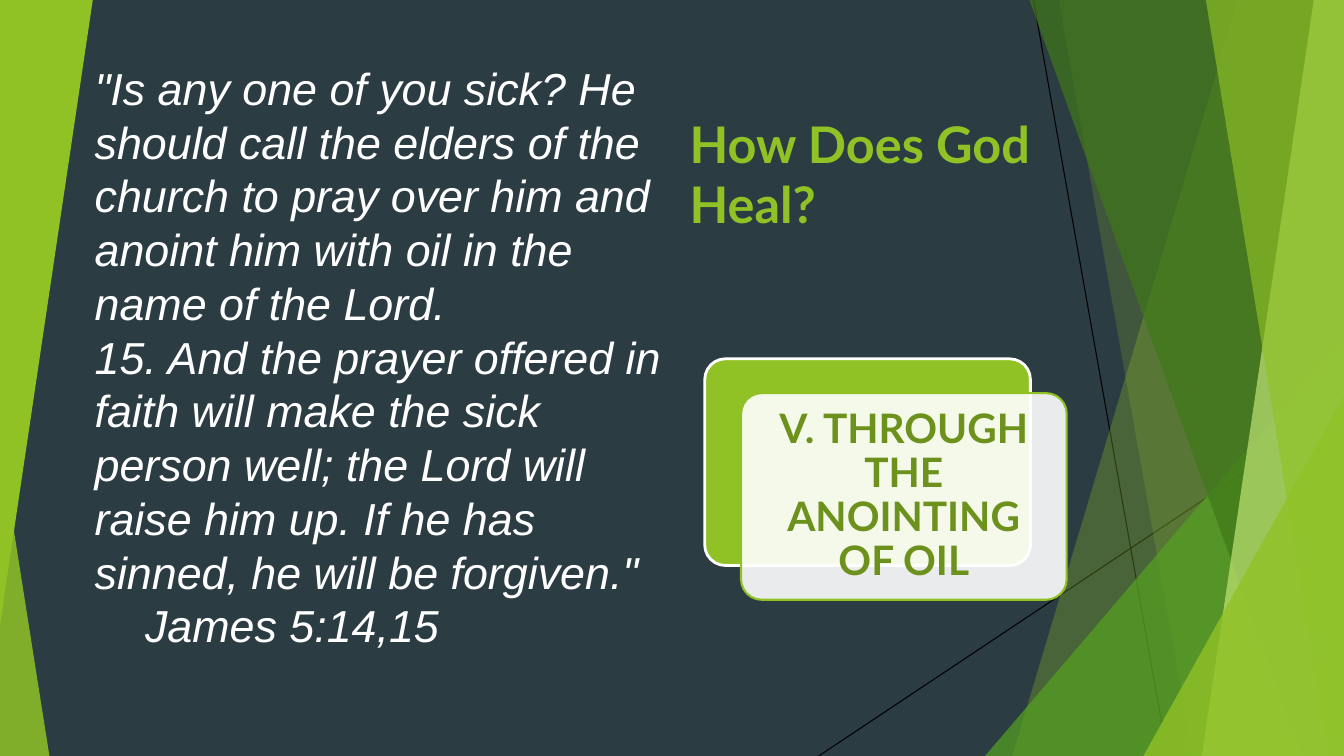
from dataclasses import dataclass

from lxml.etree import SubElement
from pptx import Presentation
from pptx.dml.color import RGBColor
from pptx.enum.shapes import MSO_CONNECTOR, MSO_SHAPE
from pptx.enum.text import MSO_ANCHOR, MSO_AUTO_SIZE, PP_ALIGN
from pptx.oxml.ns import qn
from pptx.util import Inches, Pt

WIDTH, HEIGHT = 13.33, 7.5
SLATE = RGBColor(0x2C, 0x3C, 0x43)
LIME = RGBColor(0x90, 0xC2, 0x26)
PALE_LIME = RGBColor(0xC0, 0xE4, 0x74)
GREEN = RGBColor(0x54, 0xA0, 0x21)
FOREST = RGBColor(0x3F, 0x78, 0x19)
OLIVE = RGBColor(0x6C, 0x92, 0x1D)
WHITE = RGBColor(0xFF, 0xFF, 0xFF)
BLACK = RGBColor(0, 0, 0)


@dataclass
class Facet:
    """Full-height band from a slanted left edge to the slide's right edge."""
    top_x: float
    bottom_x: float
    color: RGBColor
    opacity: int


@dataclass
class Triangle:
    left: float
    top: float
    width: float
    height: float
    apex: float
    color: RGBColor
    opacity: int = 100
    rotation: int = 0


@dataclass
class Card:
    left: float
    top: float
    fill: RGBColor
    opacity: int
    outline: RGBColor
    outline_width: float


LINES = [(10.25, 0, 11.58, HEIGHT), (WIDTH, 4.03, 8.12, HEIGHT)]
DECORATIONS = [
    Facet(12.28, 10.04, LIME, 30),
    Facet(10.5, 11.83, LIME, 20),
    Triangle(9.77, 3.33, 3.56, 4.17, 1, GREEN, 72),
    Facet(10.21, 12.91, FOREST, 70),
    Facet(13.03, 11.92, PALE_LIME, 70),
    Facet(11.96, 13.18, LIME, 65),
    Triangle(11.34, 3.93, 1.99, 3.57, 1, LIME, 80),
    Triangle(0, 4.39, 0.49, 3.11, 0, LIME, 85),
    Triangle(0, 0, 0.92, 6.2, 1, LIME, rotation=180),
]
CARDS = [
    Card(6.99, 3.56, LIME, 100, WHITE, 2),
    Card(7.35, 3.9, WHITE, 90, LIME, 1.5),
]
VERSES = [
    '"Is any one of you sick? He should call the elders of the church to pray '
    'over him and anoint him with oil in the name of the Lord.',
    '15. And the prayer offered in faith will make the sick person well; the '
    'Lord will raise him up. If he has sinned, he will be forgiven."',
    'James 5:14,15',
]


def paint(shape, color: RGBColor, opacity: int) -> None:
    shape.shadow.inherit = False
    shape.fill.solid()
    shape.fill.fore_color.rgb = color
    if opacity < 100:
        tint = shape.element.spPr.find(qn("a:solidFill")).find(qn("a:srgbClr"))
        SubElement(tint, qn("a:alpha"), val=str(opacity * 1000))


def draw_line(slide, ends: tuple) -> None:
    line = slide.shapes.add_connector(
        MSO_CONNECTOR.STRAIGHT, *(Inches(value) for value in ends))
    line.line.color.rgb = BLACK
    line.line.width = Pt(0.75)
    SubElement(line.element.spPr, qn("a:effectLst"))


def draw_facet(slide, facet: Facet) -> None:
    builder = slide.shapes.build_freeform(Inches(facet.top_x), 0)
    corners = [(WIDTH, 0), (WIDTH, HEIGHT), (facet.bottom_x, HEIGHT)]
    builder.add_line_segments([(Inches(x), Inches(y)) for x, y in corners])
    shape = builder.convert_to_shape()
    paint(shape, facet.color, facet.opacity)
    shape.line.fill.background()


def draw_triangle(slide, triangle: Triangle) -> None:
    shape = slide.shapes.add_shape(
        MSO_SHAPE.ISOSCELES_TRIANGLE, Inches(triangle.left), Inches(triangle.top),
        Inches(triangle.width), Inches(triangle.height))
    shape.adjustments[0] = triangle.apex
    shape.rotation = triangle.rotation
    paint(shape, triangle.color, triangle.opacity)
    shape.line.fill.background()


def draw_card(slide, card: Card) -> None:
    shape = slide.shapes.add_shape(
        MSO_SHAPE.ROUNDED_RECTANGLE, Inches(card.left), Inches(card.top),
        Inches(3.23), Inches(2.05))
    shape.adjustments[0] = 0.1
    paint(shape, card.fill, card.opacity)
    shape.line.color.rgb = card.outline
    shape.line.width = Pt(card.outline_width)


def format_runs(paragraph, font: str, size: int, color: RGBColor,
                bold: bool = False, italic: bool = False) -> None:
    for run in paragraph.runs:
        run.font.name = font
        run.font.size = Pt(size)
        run.font.color.rgb = color
        run.font.bold = bold
        run.font.italic = italic


def add_title(slide) -> None:
    title = slide.shapes.title
    title.left, title.top = Inches(6.74), Inches(1.07)
    title.width, title.height = Inches(4.09), Inches(1.44)
    frame = title.text_frame
    frame.text = "How Does God Heal?"
    frame.vertical_anchor = MSO_ANCHOR.TOP
    frame.auto_size = MSO_AUTO_SIZE.NONE
    frame.paragraphs[0].alignment = PP_ALIGN.LEFT
    format_runs(frame.paragraphs[0], "Lato", 36, LIME, bold=True)


def add_card_label(slide) -> None:
    label = slide.shapes.add_textbox(
        Inches(7.41), Inches(3.96), Inches(3.11), Inches(1.93))
    frame = label.text_frame
    frame.word_wrap = True
    frame.vertical_anchor = MSO_ANCHOR.MIDDLE
    frame.margin_left = frame.margin_right = Inches(0.12)
    frame.margin_top = frame.margin_bottom = Inches(0.12)
    frame.text = "V. THROUGH THE ANOINTING OF OIL"
    paragraph = frame.paragraphs[0]
    paragraph.alignment = PP_ALIGN.CENTER
    paragraph.line_spacing = 0.9
    format_runs(paragraph, "Lato", 29, OLIVE, bold=True)


def add_verses(slide) -> None:
    box = slide.shapes.add_textbox(
        Inches(0.84), Inches(0), Inches(5.82), Inches(7.24))
    frame = box.text_frame
    frame.word_wrap = True
    frame.margin_top = Inches(0.6)
    frame.margin_right = Inches(0.05)
    frame.text = "\n".join(VERSES)
    for paragraph in frame.paragraphs:
        paragraph.line_spacing = Pt(38.4)
        format_runs(paragraph, "Arial", 32, WHITE, italic=True)
    # Indent the citation
    citation = frame.paragraphs[-1]
    citation._p.get_or_add_pPr().set("marL", str(Inches(0.5)))


def main() -> None:
    presentation = Presentation()
    presentation.slide_width = Inches(WIDTH)
    presentation.slide_height = Inches(HEIGHT)
    slide = presentation.slides.add_slide(presentation.slide_layouts[5])
    slide.background.fill.solid()
    slide.background.fill.fore_color.rgb = SLATE

    # Faceted border
    for ends in LINES:
        draw_line(slide, ends)
    for decoration in DECORATIONS:
        if isinstance(decoration, Facet):
            draw_facet(slide, decoration)
        else:
            draw_triangle(slide, decoration)

    # Title, layered cards and scripture
    add_title(slide)
    for card in CARDS:
        draw_card(slide, card)
    add_card_label(slide)
    add_verses(slide)
    presentation.save("out.pptx")


if __name__ == "__main__":
    main()
